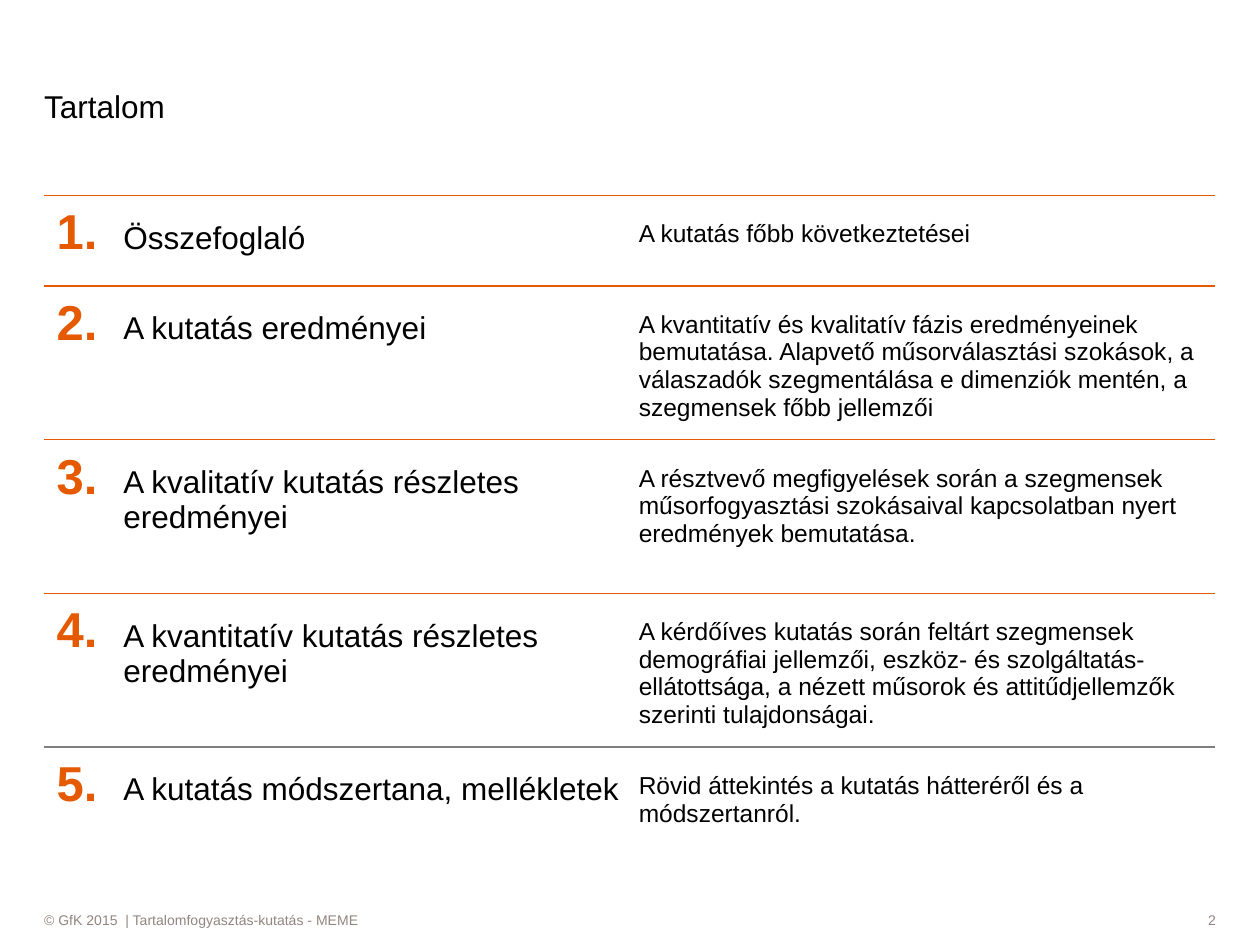
import dataclasses

import pptx
import pptx.dml.color
import pptx.enum.shapes
import pptx.enum.text
import pptx.oxml
import pptx.oxml.ns
import pptx.util

EMU_PER_PX = 9144  # 100 px to the inch
FONT = "Arial"
ORANGE, BLACK, GREY, WHITE = "E55A00", "000000", "928580", "FFFFFF"
RULE_GREY = "7F7F7F"
NO_STYLE = "{2D5ABB26-0587-4C30-8999-92F81FD0307C}"
ALIGN = pptx.enum.text.PP_ALIGN
ANCHOR = pptx.enum.text.MSO_ANCHOR


@dataclasses.dataclass
class Chapter:
    title: str
    summary: str
    height: int = 122
    rule: str = ORANGE


@dataclasses.dataclass
class Column:
    width: int
    size: int
    color: str
    bold: bool
    left_inset: int
    top_inset: int


CHAPTERS = [
    Chapter("Összefoglaló", "A kutatás főbb következtetései", height=72),
    Chapter("A kutatás eredményei",
            "A kvantitatív és kvalitatív fázis eredményeinek bemutatása. Alapvető "
            "műsorválasztási szokások, a válaszadók szegmentálása e dimenziók mentén, "
            "a szegmensek főbb jellemzői"),
    Chapter("A kvalitatív kutatás részletes eredményei",
            "A résztvevő megfigyelések során a szegmensek műsorfogyasztási szokásaival "
            "kapcsolatban nyert eredmények bemutatása."),
    Chapter("A kvantitatív kutatás részletes eredményei",
            "A kérdőíves kutatás során feltárt szegmensek demográfiai jellemzői, eszköz- "
            "és szolgáltatás-ellátottsága, a nézett műsorok és attitűdjellemzők szerinti "
            "tulajdonságai."),
    Chapter("A kutatás módszertana, mellékletek",
            "Rövid áttekintés a kutatás hátteréről és a módszertanról.", rule=RULE_GREY),
]
COLUMNS = [
    Column(63, 28, ORANGE, True, 10, 8),
    Column(409, 18, BLACK, False, 0, 20),
    Column(457, 14, BLACK, False, 0, 20),
]


def px(length: int) -> pptx.util.Emu:
    return pptx.util.Emu(length * EMU_PER_PX)


def rgb(color: str) -> pptx.dml.color.RGBColor:
    return pptx.dml.color.RGBColor.from_string(color)


def write_text(frame, text: str, *, size: int, color: str, bold: bool = False,
               align=ALIGN.LEFT) -> None:
    frame.word_wrap = True
    para = frame.paragraphs[0]
    para.alignment = align
    span = para.add_run()
    span.text = text
    span.font.name = FONT
    span.font.size = pptx.util.Pt(size)
    span.font.bold = bold
    span.font.color.rgb = rgb(color)


def clear_insets(frame, anchor) -> None:
    frame.margin_left = frame.margin_right = frame.margin_top = frame.margin_bottom = 0
    frame.vertical_anchor = anchor


def add_title(slide, text: str) -> None:
    title = slide.shapes.title
    title.left, title.top, title.width, title.height = map(px, (35, 28, 693, 71))
    clear_insets(title.text_frame, ANCHOR.BOTTOM)
    write_text(title.text_frame, text, size=18, color=BLACK)


def add_footer(slide, text: str, left: int, width: int, align) -> None:
    box = slide.shapes.add_shape(pptx.enum.shapes.MSO_SHAPE.RECTANGLE,
                                 px(left), px(722), px(width), px(16))
    box.shadow.inherit = False
    box.fill.solid()
    box.fill.fore_color.rgb = rgb(WHITE)
    box.line.fill.background()
    clear_insets(box.text_frame, ANCHOR.MIDDLE)
    write_text(box.text_frame, text, size=8, color=GREY, align=align)


def set_borders(cell, top: str, bottom: str | None) -> None:
    """Draw the horizontal rules of a cell and hide its other edges."""
    edges = {"lnL": None, "lnR": None, "lnT": top, "lnB": bottom}
    properties = cell._tc.get_or_add_tcPr()
    for index, (tag, color) in enumerate(edges.items()):
        paint = (f'<a:solidFill><a:srgbClr val="{color}"/></a:solidFill>'
                 if color else "<a:noFill/>")
        properties.insert(index, pptx.oxml.parse_xml(
            f'<a:{tag} {pptx.oxml.ns.nsdecls("a")} w="{pptx.util.Pt(0.75)}">{paint}</a:{tag}>'))


def add_contents(slide) -> None:
    width = sum(column.width for column in COLUMNS)
    height = sum(chapter.height for chapter in CHAPTERS)
    frame = slide.shapes.add_table(len(CHAPTERS), len(COLUMNS),
                                   px(35), px(155), px(width), px(height))
    table = frame.table
    table.first_row = table.horz_banding = False
    table._tbl.tblPr.find(pptx.oxml.ns.qn("a:tableStyleId")).text = NO_STYLE
    for index, column in enumerate(COLUMNS):
        table.columns[index].width = px(column.width)

    next_rules = [chapter.rule for chapter in CHAPTERS[1:]] + [None]
    for row, (chapter, next_rule) in enumerate(zip(CHAPTERS, next_rules)):
        table.rows[row].height = px(chapter.height)
        texts = (f"{row + 1}.", chapter.title, chapter.summary)
        for index, (column, text) in enumerate(zip(COLUMNS, texts)):
            cell = table.cell(row, index)
            cell.fill.background()
            cell.margin_left, cell.margin_top = px(column.left_inset), px(column.top_inset)
            cell.margin_right, cell.margin_bottom = px(10), px(5)
            write_text(cell.text_frame, text, size=column.size, color=column.color,
                       bold=column.bold)
            set_borders(cell, chapter.rule, next_rule)


def main() -> None:
    deck = pptx.Presentation()
    deck.slide_width, deck.slide_height = px(1000), px(750)
    page = deck.slides.add_slide(deck.slide_layouts[5])  # title only

    # Footer
    add_footer(page, "© GfK 2015  | Tartalomfogyasztás-kutatás - MEME", 35, 772, ALIGN.LEFT)
    add_footer(page, "2", 823, 142, ALIGN.RIGHT)

    # Title and table of contents
    add_title(page, "Tartalom")
    add_contents(page)
    deck.save("out.pptx")


if __name__ == "__main__":
    main()
